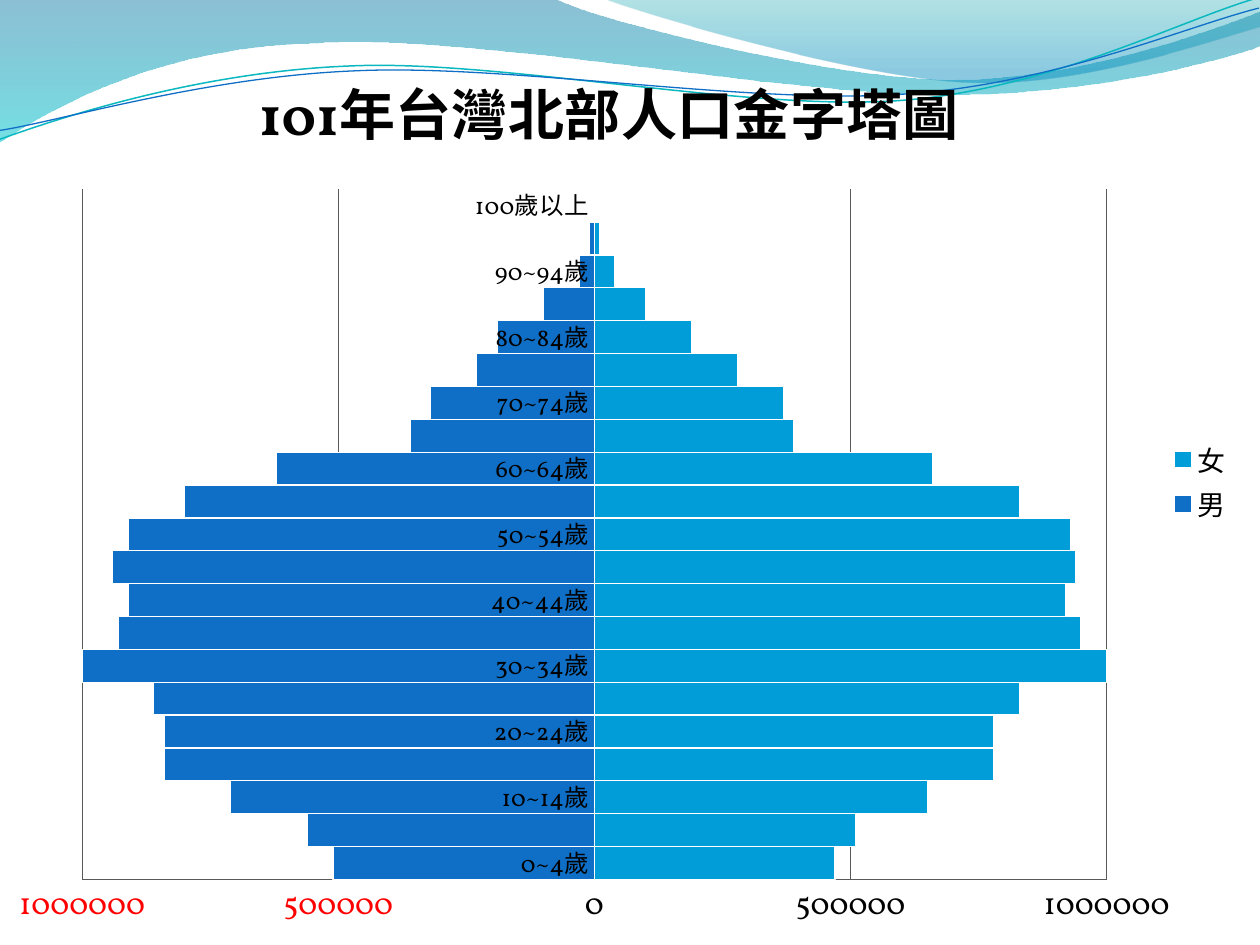
from typing import NamedTuple, Optional

from lxml import etree
from pptx import Presentation
from pptx import util as u
from pptx.chart.data import CategoryChartData
from pptx.dml.color import RGBColor
from pptx.enum import chart as chart_enum
from pptx.oxml import ns, parse_xml

FONT = "Vollkorn"


class Stop(NamedTuple):
    position: float
    color: str
    opacity: int


class Wave(NamedTuple):
    """A start point, then lines (2 numbers) and Bezier curves (6 numbers), in inches."""
    start: tuple
    segments: list
    stops: Optional[list] = None
    line_color: str = ""
    line_width: float = 0
    rotation: float = 0


class Series(NamedTuple):
    name: str
    color: str
    thousands: list


WAVES = [
    Wave((0, 0), [
        (4.4, -0.01), (4.76, 0.17, 6.64, 0.63, 7.58, 0.63),
        (8.53, 0.63, 9.58, 0.26, 10, 0.09), (10.01, 0.36),
        (9.83, 0.44, 8.7, 0.76, 7.46, 0.75), (6.22, 0.75, 3.82, 0.28, 2.57, 0.34),
        (1.29, 0.36, 0.46, 0.83, -0.01, 1.13), (0, 0),
    ], stops=[Stop(0, "0074A1", 45), Stop(1, "00C6CF", 55)]),
    Wave((4.79, -0.01), [
        (5.09, 0.11, 6.82, 0.62, 7.69, 0.65), (8.56, 0.69, 9.61, 0.32, 10, 0.21),
        (10, 0), (4.79, -0.01),
    ], stops=[Stop(0, "00A1A9", 30), Stop(0.8, "008BBF", 45)]),
    Wave((-0.02, 0.87), [
        (0.47, 0.72, 1.58, 0.41, 2.78, 0.42), (3.96, 0.42, 5.91, 0.93, 7.12, 0.9),
        (8.32, 0.87, 9.4, 0.36, 10, 0.22),
    ], line_color="0AB8BF", line_width=0.85, rotation=357.3),
    Wave((-0.02, 0.8), [
        (0.46, 0.75, 1.64, 0.45, 2.83, 0.46), (4.03, 0.46, 5.96, 0.88, 7.16, 0.85),
        (8.35, 0.83, 9.42, 0.42, 10.01, 0.3),
    ], line_color="0F6FC6", line_width=0.75, rotation=357.3),
]

AGES = [f"{age}~{age + 4}歲" for age in range(0, 100, 5)] + ["100歲以上"]
POPULATION = [
    Series("男", "0F6FC6", [-510, -560, -710, -840, -840, -860, -1020, -930, -910, -940, -910,
                           -800, -620, -360, -320, -230, -190, -100, -30, -10, 0]),
    Series("女", "009DD9", [470, 510, 650, 780, 780, 830, 1020, 950, 920, 940, 930,
                           830, 660, 390, 370, 280, 190, 100, 40, 10, 0]),
]


def rgb(color: str) -> RGBColor:
    return RGBColor.from_string(color)


def set_line(line, color: str, width: float) -> None:
    line.color.rgb = rgb(color)
    line.width = u.Pt(width)


def set_font(font, size: float, bold: bool = False) -> None:
    font.name = FONT
    font.size = u.Pt(size)
    font.bold = bold
    font.color.rgb = rgb("000000")


def curve_segments(shape, segments: list) -> None:
    """Join the three line points of each Bezier segment into one curve."""
    lines = iter(list(shape.element.iter(ns.qn("a:lnTo"))))
    for segment in segments:
        curve = next(lines)
        if len(segment) == 6:
            curve.tag = ns.qn("a:cubicBezTo")
            for _ in range(2):
                line = next(lines)
                curve.append(line[0])
                line.getparent().remove(line)


def fill_gradient(shape, stops: list) -> None:
    """Fill from top to bottom with translucent stops."""
    shape.fill.gradient()
    shape.fill.gradient_angle = 270
    for target, stop in zip(shape.fill.gradient_stops, stops):
        target.position = stop.position
        target.color.rgb = rgb(stop.color)
    for color, stop in zip(shape.element.iter(ns.qn("a:srgbClr")), stops):
        etree.SubElement(color, ns.qn("a:alpha"), val=str(stop.opacity * 1000))


def draw_wave(slide, wave: Wave) -> None:
    points = [(u.Inches(x), u.Inches(y)) for segment in wave.segments
              for x, y in zip(segment[::2], segment[1::2])]
    builder = slide.shapes.build_freeform(*(u.Inches(value) for value in wave.start))
    builder.add_line_segments(points, close=bool(wave.stops))
    shape = builder.convert_to_shape()
    curve_segments(shape, wave.segments)
    shape.rotation = wave.rotation
    shape.shadow.inherit = False
    if wave.stops:
        fill_gradient(shape, wave.stops)
        shape.line.fill.background()
    else:
        shape.fill.background()
        set_line(shape.line, wave.line_color, wave.line_width)


def set_layout(parent, index: int, target: str = "", **fractions: float) -> None:
    """Fix the place of a chart part, in fractions of the chart."""
    for old_layout in parent.findall(ns.qn("c:layout")):
        parent.remove(old_layout)
    layout = parse_xml(f'<c:layout {ns.nsdecls("c")}><c:manualLayout/></c:layout>')
    values = {"layoutTarget": target} if target else {}
    values |= {"xMode": "edge", "yMode": "edge", **fractions}
    for name, value in values.items():
        etree.SubElement(layout[0], ns.qn(f"c:{name}"), val=str(value))
    parent.insert(index, layout)


def draw_pyramid(slide) -> None:
    data = CategoryChartData()
    data.categories = AGES
    for series in POPULATION:
        data.add_series(series.name, [value * 1000 for value in series.thousands])
    chart = slide.shapes.add_chart(
        chart_enum.XL_CHART_TYPE.BAR_CLUSTERED, u.Inches(0), u.Inches(0.36),
        u.Inches(9.88), u.Inches(7.01), data).chart
    set_font(chart.font, 10)

    chart.has_title = True
    title = chart.chart_title.text_frame
    title.text = "101年台灣北部人口金字塔圖"
    set_font(title.paragraphs[0].font, 32, bold=True)
    chart.chart_title.include_in_layout = False
    set_layout(chart.element.find(".//" + ns.qn("c:title")), 1, x=0.2, y=0.01)

    chart.has_legend = True
    chart.legend.position = chart_enum.XL_LEGEND_POSITION.RIGHT
    chart.legend.include_in_layout = False
    set_font(chart.legend.font, 16)

    plot = chart.plots[0]
    plot.gap_width = 0
    plot.overlap = 100
    plot.vary_by_categories = False
    for bars, series in zip(plot.series, POPULATION):
        bars.invert_if_negative = False
        bars.format.fill.solid()
        bars.format.fill.fore_color.rgb = rgb(series.color)
        set_line(bars.format.line, "FFFFFF", 0.75)

    ages, people = chart.category_axis, chart.value_axis
    for axis, size in ((ages, 14), (people, 18)):
        axis.major_tick_mark = axis.minor_tick_mark = chart_enum.XL_TICK_MARK.NONE
        set_font(axis.tick_labels.font, size)
        set_line(axis.format.line, "595959", 0.75)
    people.minimum_scale, people.maximum_scale = -1000000, 1000000
    people.major_unit = 500000
    people.tick_labels.number_format = "0;[Red]0"
    people.tick_labels.number_format_is_linked = False
    people.has_major_gridlines = True
    set_line(people.major_gridlines.format.line, "595959", 0.75)
    set_layout(chart.element.find(".//" + ns.qn("c:plotArea")), 0, "inner",
               x=0.066, y=0.165, w=0.823, h=0.791)


def main() -> None:
    presentation = Presentation()
    presentation.slide_width, presentation.slide_height = u.Inches(10), u.Inches(7.5)
    slide = presentation.slides.add_slide(presentation.slide_layouts.get_by_name("Blank"))
    for wave in WAVES:
        draw_wave(slide, wave)
    draw_pyramid(slide)
    presentation.save("out.pptx")


if __name__ == "__main__":
    main()
